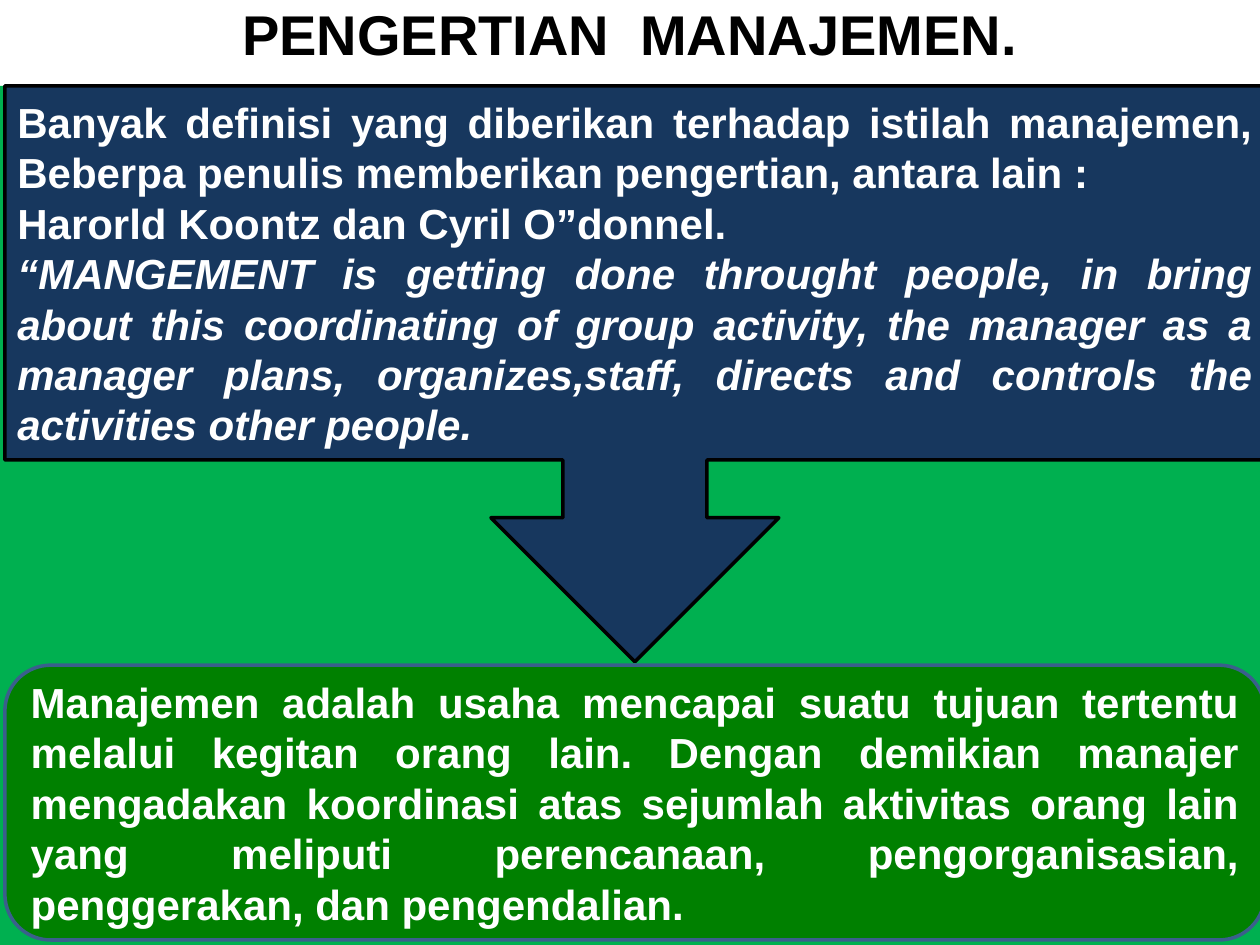
import pptx
import pptx.dml.color
import pptx.enum.shapes
import pptx.enum.text
import pptx.util
from lxml import etree

Cm, Pt = pptx.util.Cm, pptx.util.Pt
RGBColor = pptx.dml.color.RGBColor
Shape = pptx.enum.shapes.MSO_SHAPE
Align = pptx.enum.text.PP_ALIGN

BLACK = RGBColor(0x00, 0x00, 0x00)
WHITE = RGBColor(0xFF, 0xFF, 0xFF)
NAVY = RGBColor(0x17, 0x37, 0x5E)
BRIGHT_GREEN = RGBColor(0x00, 0xB0, 0x50)
DARK_GREEN = RGBColor(0x00, 0x80, 0x00)
STEEL = RGBColor(0x3A, 0x5F, 0x8C)

PAGE_WIDTH, PAGE_HEIGHT = Cm(25.4), Cm(19.05)
PANEL_TOP = Cm(1.73)
CARD_LEFT = Cm(0.1)


def write(paragraph, text, size=24, color=WHITE, italic=False, align=Align.JUSTIFY):
    paragraph.alignment = align
    span = paragraph.add_run()
    span.text = text
    span.font.name = "Arial"
    span.font.size = Pt(size)
    span.font.bold = True
    span.font.italic = italic
    span.font.color.rgb = color


class SlideBuilder:
    """Holds the style and the current page."""

    line_width = Pt(2)

    def __init__(self, deck):
        self.page = deck.slides.add_slide(deck.slide_layouts[5])

    def title(self, text, height):
        box = self.page.shapes.title
        box.left, box.top, box.width, box.height = 0, 0, PAGE_WIDTH, height
        frame = box.text_frame
        frame.auto_size = pptx.enum.text.MSO_AUTO_SIZE.NONE
        frame.vertical_anchor = pptx.enum.text.MSO_ANCHOR.MIDDLE
        write(frame.paragraphs[0], text, size=32, color=BLACK, align=Align.CENTER)

    def block(self, kind, left, top, height, fill, line=None):
        box = self.page.shapes.add_shape(kind, left, top, PAGE_WIDTH, height)
        box.shadow.inherit = False
        box.fill.solid()
        box.fill.fore_color.rgb = fill
        if line is None:
            box.line.fill.background()
        else:
            box.line.color.rgb = line
            box.line.width = self.line_width
        return box

    def card(self, kind, top, height, fill, line, entries):
        """Draws a block with one paragraph per (text, italic) entry."""
        frame = self.block(kind, CARD_LEFT, top, height, fill, line).text_frame
        frame.word_wrap = True
        frame.vertical_anchor = pptx.enum.text.MSO_ANCHOR.MIDDLE
        for index, (text, italic) in enumerate(entries):
            paragraph = frame.add_paragraph() if index else frame.paragraphs[0]
            write(paragraph, text, italic=italic)


def main():
    deck = pptx.Presentation()
    deck.slide_width, deck.slide_height = PAGE_WIDTH, PAGE_HEIGHT
    builder = SlideBuilder(deck)

    # Title and green panel
    builder.title("PENGERTIAN  MANAJEMEN.", Cm(1.32))
    builder.block(Shape.RECTANGLE, 0, PANEL_TOP, PAGE_HEIGHT - PANEL_TOP, BRIGHT_GREEN)

    # Quoted definition, pointing down to the conclusion
    builder.card(Shape.DOWN_ARROW_CALLOUT, PANEL_TOP, Cm(11.61), NAVY, BLACK, [
        ("Banyak definisi yang diberikan terhadap istilah manajemen, "
         "Beberpa penulis memberikan pengertian, antara lain :", False),
        ("Harorld Koontz dan Cyril O”donnel.", False),
        ("“MANGEMENT is getting done throught people, in bring about this "
         "coordinating of group activity, the manager as a manager plans, "
         "organizes,staff, directs and controls the activities other people.", True),
    ])

    # Conclusion
    builder.card(Shape.ROUNDED_RECTANGLE, Cm(13.41), Cm(5.54), DARK_GREEN, STEEL, [
        ("Manajemen adalah usaha mencapai suatu tujuan tertentu melalui kegitan "
         "orang lain. Dengan demikian manajer mengadakan koordinasi atas sejumlah "
         "aktivitas orang lain yang meliputi perencanaan, pengorganisasian, "
         "penggerakan, dan pengendalian.", False),
    ])

    deck.save("out.pptx")


if __name__ == "__main__":
    main()
